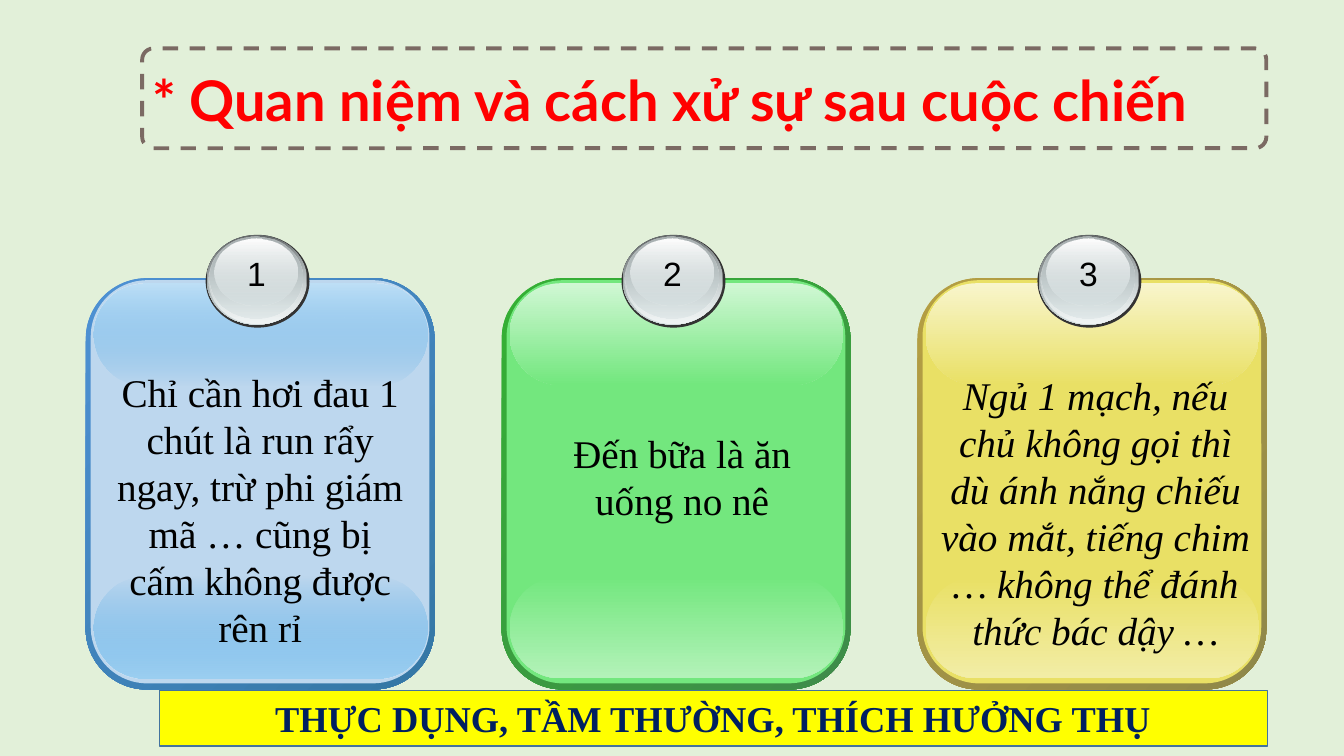
import pptx
import pptx.util
import pptx.dml.color
import pptx.enum.dml
import pptx.enum.shapes
import pptx.enum.text
import pptx.oxml.ns
import lxml.etree

WIDTH, HEIGHT = 13.33, 7.5
SHAPES = pptx.enum.shapes.MSO_SHAPE
ALIGN = pptx.enum.text.PP_ALIGN
ANCHOR = pptx.enum.text.MSO_ANCHOR
SERIF = "Times New Roman"

# Card grid: three equal columns
CARD_LEFT, CARD_TOP, CARD_PITCH = 0.85, 2.76, 4.125

# Body layers of a card: offset and size, corner radius share
RIM = (0, 0, 3.46, 4.08, 0.175)
FACE = (0.05, 0.02, 3.36, 4.0, 0.167)
LOWER_GLOSS = (0.08, 2.96, 3.31, 1.01, 0.5)
UPPER_GLOSS = (0.08, 0.05, 3.31, 1.01, 0.5)

# Badge layers: offset and size, then a hex colour or (colour, opacity) stops
BADGE_LAYERS = [
    ((1.19, -0.43, 1.03, 0.92), "333333"),
    ((1.20, -0.43, 0.99, 0.89), [("636869", 100), ("D6E1E2", 100)]),
    ((1.22, -0.42, 0.97, 0.87), [("D6E1E2", 0), ("F1F5F5", 100)]),
    ((1.23, -0.41, 0.92, 0.81), [("AAB2B3", 100), ("D6E1E2", 48)]),
    ((1.28, -0.39, 0.82, 0.66), [("FFFFFF", 100), ("D6E1E2", 38)]),
]
NUMBER_BOX = (1.41, -0.3, 0.57, 0.65)

# Each card: colours, text, text box offset and size
CARDS = [
    dict(rim=("4E91D4", "3477A4"), face="BDD7EE",
         lower=[("3CA1E6", 0), ("9BCFF2", 100)],
         upper=[("BEE0F7", 100), ("3CA1E6", 0)],
         text="Chỉ cần hơi đau 1 chút là run rẩy ngay, trừ phi giám mã … "
              "cũng bị cấm không được rên rỉ",
         text_box=(0.17, 0.84, 3.12, 2.93), italic=False),
    dict(rim=("34B034", "3F8B4A"), face="73E77E",
         lower=[("73E77E", 100), ("B3F2B9", 100)],
         upper=[("D0F7D4", 100), ("73E77E", 100)],
         text="Đến bữa là ăn uống no nê",
         text_box=(0.25, 1.45, 3.08, 1.04), italic=False),
    dict(rim=("B59F43", "8F8849"), face="E9E065",
         lower=[("E9E065", 100), ("F2EDA6", 100)],
         upper=[("F8F5CC", 100), ("E9E065", 100)],
         text="Ngủ 1 mạch, nếu chủ không gọi thì dù ánh nắng chiếu vào mắt, "
              "tiếng chim … không thể đánh thức bác dậy …",
         text_box=(0.12, 0.87, 3.29, 3.4), italic=True),
]


def color(hex_text):
    return pptx.dml.color.RGBColor.from_string(hex_text)


def inches(box):
    return [pptx.util.Inches(length) for length in box]


def in_card(column, box):
    """Move a box given from a card's corner to its place on the slide."""
    left, top, width, height = box
    return (CARD_LEFT + column * CARD_PITCH + left, CARD_TOP + top, width, height)


def paint_gradient(shape, stops, angle):
    shape.fill.gradient()
    shape.fill.gradient_angle = 360 - angle
    for stop, position, (hex_text, opacity) in zip(shape.fill.gradient_stops, (0, 1), stops):
        stop.position = position
        stop.color.rgb = color(hex_text)
    tags = shape._element.spPr.iter(pptx.oxml.ns.qn("a:srgbClr"))
    for tag, (hex_text, opacity) in zip(tags, stops):
        if opacity < 100:
            alpha = lxml.etree.SubElement(tag, pptx.oxml.ns.qn("a:alpha"))
            alpha.set("val", str(opacity * 1000))


def add_panel(slide, preset, box, paint=None, radius=None, angle=90):
    """Preset shape without line; paint is a hex colour, gradient stops or None."""
    panel = slide.shapes.add_shape(preset, *inches(box))
    panel.shadow.inherit = False
    panel.line.fill.background()
    if radius is not None:
        panel.adjustments[0] = radius
    if paint is None:
        panel.fill.background()
    elif isinstance(paint, str):
        panel.fill.solid()
        panel.fill.fore_color.rgb = color(paint)
    else:
        paint_gradient(panel, paint, angle)
    return panel


def outline(panel, hex_text, width):
    panel.line.color.rgb = color(hex_text)
    panel.line.width = pptx.util.Pt(width)


def write(frame, text, size, font, hex_text="000000", bold=False, italic=False,
          align=ALIGN.CENTER, anchor=ANCHOR.TOP, wrap=True):
    frame.word_wrap = wrap
    frame.vertical_anchor = anchor
    paragraph = frame.paragraphs[0]
    paragraph.alignment = align
    run = paragraph.add_run()
    run.text = text
    run.font.size = pptx.util.Pt(size)
    run.font.name = font
    run.font.bold = bold
    run.font.italic = italic
    run.font.color.rgb = color(hex_text)


def add_text(slide, box, *words, **style):
    write(slide.shapes.add_textbox(*inches(box)).text_frame, *words, **style)


def add_heading(slide):
    heading = slide.shapes.title
    heading.left, heading.top, heading.width, heading.height = inches((1.41, 0.54, 11.2, 0.88))
    write(heading.text_frame, "* Quan niệm và cách xử sự sau cuộc chiến", 40, "Lato",
          "FF0000", bold=True, align=ALIGN.LEFT, anchor=ANCHOR.MIDDLE)
    frame = add_panel(slide, SHAPES.ROUNDED_RECTANGLE, (1.41, 0.48, 11.15, 0.99), radius=0.113)
    outline(frame, "7B6A63", 2.75)
    frame.line.dash_style = pptx.enum.dml.MSO_LINE.DASH


def add_card(slide, column, card):
    # Body with glossy top and bottom
    rim = [(hex_text, 100) for hex_text in card["rim"]]
    layers = [(RIM, rim, 45), (FACE, card["face"], 0),
              (LOWER_GLOSS, card["lower"], 90), (UPPER_GLOSS, card["upper"], 90)]
    for (*box, radius), paint, angle in layers:
        add_panel(slide, SHAPES.ROUNDED_RECTANGLE, in_card(column, box), paint, radius, angle)
    # Numbered badge
    for box, paint in BADGE_LAYERS:
        add_panel(slide, SHAPES.OVAL, in_card(column, box), paint)
    add_text(slide, in_card(column, NUMBER_BOX), str(column + 1), 24, "Arial", wrap=False)
    # Card text
    add_text(slide, in_card(column, card["text_box"]), card["text"], 28, SERIF,
             italic=card["italic"])


def add_conclusion(slide):
    banner = add_panel(slide, SHAPES.RECTANGLE, (1.58, 6.85, 10.99, 0.55), "FFFF00")
    outline(banner, "43739E", 1)
    write(banner.text_frame, "THỰC DỤNG, TẦM THƯỜNG, THÍCH HƯỞNG THỤ", 26, SERIF,
          "002060", bold=True, anchor=ANCHOR.MIDDLE)


def main():
    deck = pptx.Presentation()
    deck.slide_width, deck.slide_height = inches((WIDTH, HEIGHT))
    slide = deck.slides.add_slide(deck.slide_layouts[5])
    slide.background.fill.solid()
    slide.background.fill.fore_color.rgb = color("E2F0D9")

    add_heading(slide)
    for column, card in enumerate(CARDS):
        add_card(slide, column, card)
    add_conclusion(slide)
    deck.save("out.pptx")


if __name__ == "__main__":
    main()
